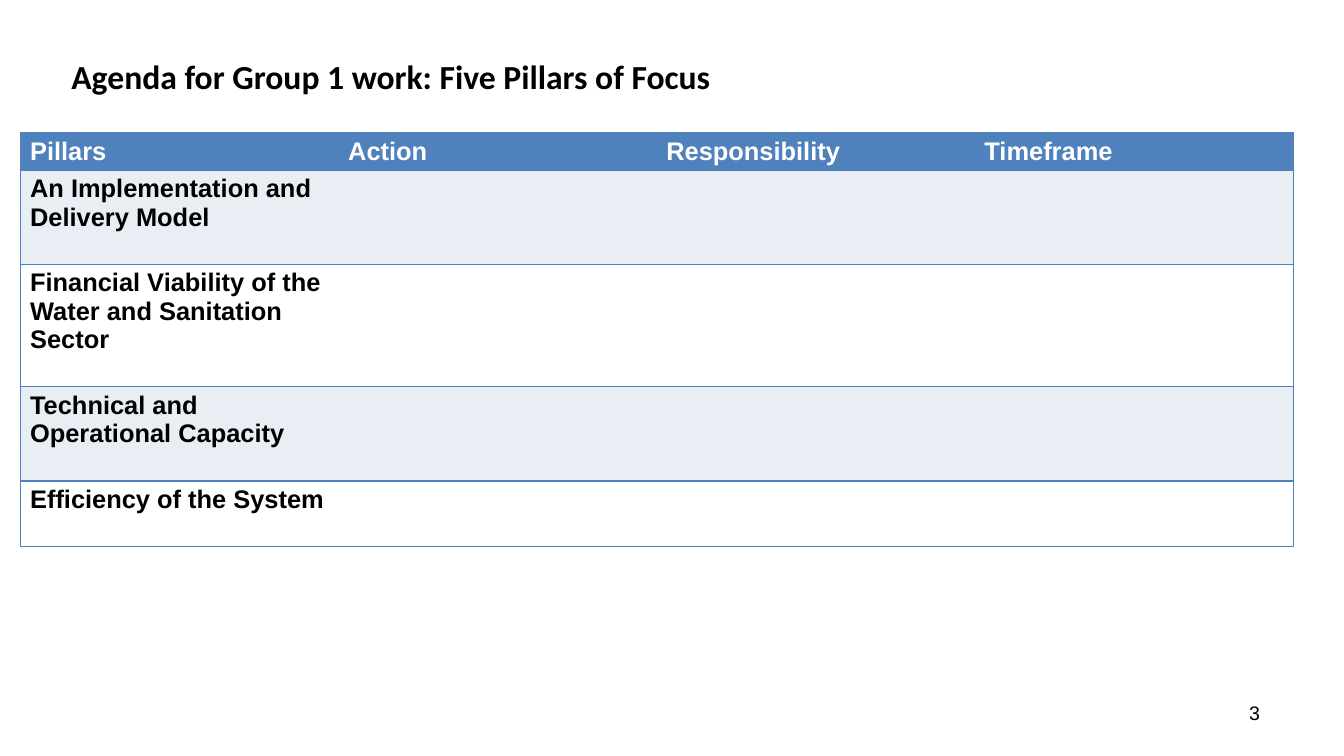
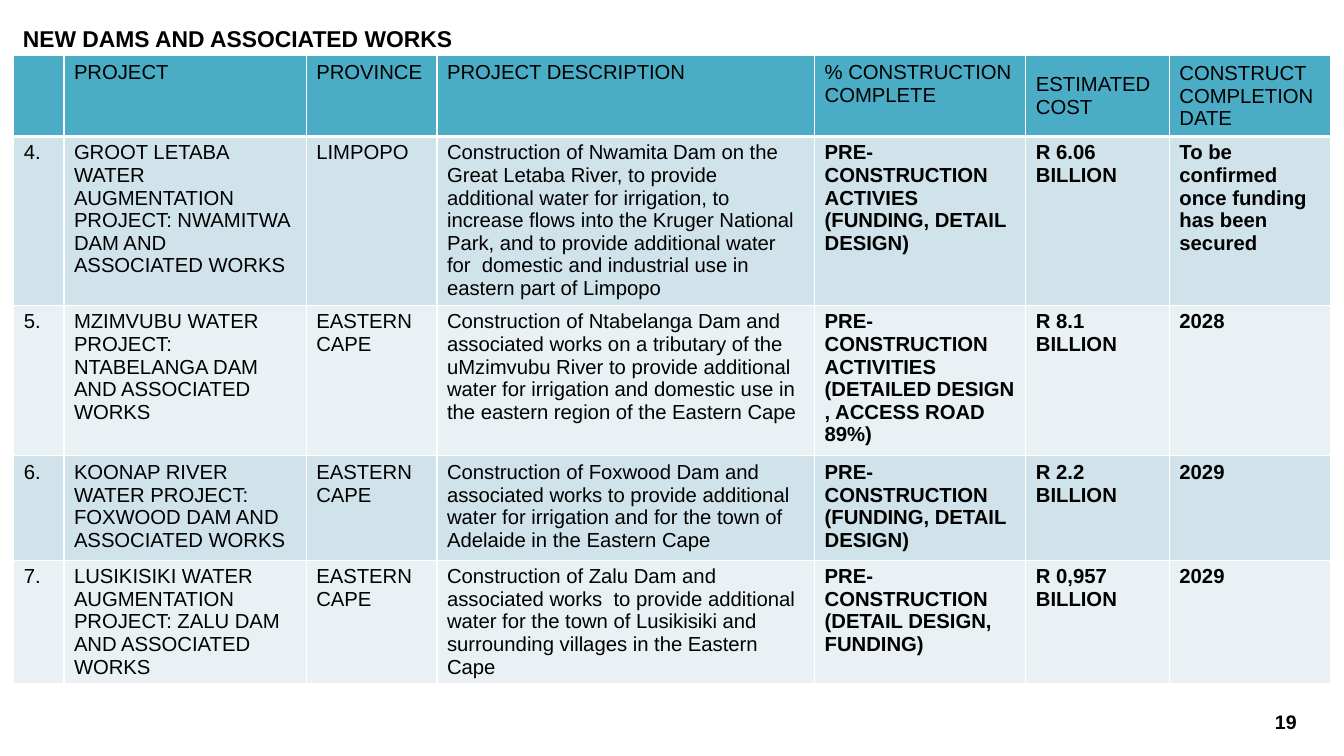
import dataclasses

import lxml.etree
import pptx
import pptx.dml.color
import pptx.enum.text
import pptx.oxml.ns
import pptx.util

ALIGN = pptx.enum.text.PP_ALIGN
ANCHOR = pptx.enum.text.MSO_ANCHOR


@dataclasses.dataclass(frozen=True)
class Theme:
    wide: float = 14.7
    high: float = 8.27
    body: str = "Arial"
    head: str = "Calibri"
    black: str = "000000"
    white: str = "FFFFFF"
    blue: str = "4F81BD"
    mist: str = "E9EDF4"
    teal: str = "4BACC6"
    aqua: str = "D0E3EA"
    pale: str = "E9F1F5"
    page: float = 15.4


THEME = Theme()


@dataclasses.dataclass(frozen=True)
class Box:
    left: float
    top: float
    wide: float
    high: float


@dataclasses.dataclass(frozen=True)
class Type:
    size: float
    bold: bool = False
    color: str = THEME.black
    face: str = THEME.body


@dataclasses.dataclass(frozen=True)
class Label:
    text: str
    box: Box
    type: Type
    align: ALIGN = ALIGN.LEFT


@dataclasses.dataclass(frozen=True)
class Grid:
    left: float
    top: float
    cols: list[float]
    rows: list[float]
    cells: list[list[str]]
    fills: tuple[str, str, str]
    head: Type
    key: Type
    fact: Type
    keys: int
    line: str
    rule: float
    inner: bool
    pad: tuple[float, float]
    mid: tuple[int, ...] = ()


@dataclasses.dataclass(frozen=True)
class Page:
    title: Label
    grid: Grid
    number: Label


def across(share: float) -> int:
    return pptx.util.Inches(THEME.wide * share / 100)


def down(share: float) -> int:
    return pptx.util.Inches(THEME.high * share / 100)


def rgb(code: str) -> pptx.dml.color.RGBColor:
    return pptx.dml.color.RGBColor.from_string(code)


def style(frame, kind: Type, align: ALIGN = ALIGN.LEFT) -> None:
    for para in frame.paragraphs:
        para.alignment = align
        para.font.size = pptx.util.Pt(kind.size)
        para.font.bold = kind.bold
        para.font.name = kind.face
        para.font.color.rgb = rgb(kind.color)


def write(shape, label: Label, anchor: ANCHOR) -> None:
    box = label.box
    shape.left, shape.top = across(box.left), down(box.top)
    shape.width, shape.height = across(box.wide), down(box.high)
    frame = shape.text_frame
    frame.text = label.text
    frame.word_wrap = True
    frame.auto_size = pptx.enum.text.MSO_AUTO_SIZE.NONE
    frame.vertical_anchor = anchor
    style(frame, label.type, label.align)


def edge(cell, lines: dict[str, float], color: str) -> None:
    name = pptx.oxml.ns.qn
    props = cell._tc.get_or_add_tcPr()
    for spot, (side, width) in enumerate(lines.items()):
        line = lxml.etree.Element(name(f"a:ln{side}"), w=str(pptx.util.Pt(width)))
        if width:
            fill = lxml.etree.SubElement(line, name("a:solidFill"))
            lxml.etree.SubElement(fill, name("a:srgbClr"), val=color)
        else:
            lxml.etree.SubElement(line, name("a:noFill"))
        props.insert(spot, line)


def draw_grid(slide, grid: Grid) -> None:
    last = len(grid.cols) - 1
    frame = slide.shapes.add_table(
        len(grid.rows), len(grid.cols), across(grid.left), down(grid.top),
        across(sum(grid.cols)), down(sum(grid.rows)))
    table = frame.table
    for col, share in zip(table.columns, grid.cols):
        col.width = across(share)
    for row, share in zip(table.rows, grid.rows):
        row.height = down(share)
    for r, texts in enumerate(grid.cells):
        for c, text in enumerate(texts):
            cell = table.cell(r, c)
            cell.text = text
            cell.margin_left = cell.margin_right = pptx.util.Inches(grid.pad[0])
            cell.margin_top = cell.margin_bottom = pptx.util.Inches(grid.pad[1])
            centred = r == 0 and c in grid.mid
            cell.vertical_anchor = ANCHOR.MIDDLE if centred else ANCHOR.TOP
            kind = grid.head if r == 0 else grid.key if c < grid.keys else grid.fact
            style(cell.text_frame, kind)
            cell.fill.solid()
            cell.fill.fore_color.rgb = rgb(grid.fills[0 if r == 0 else 2 - r % 2])
            edge(cell, {
                "L": 1 if grid.inner or c == 0 else 0,
                "R": 1 if grid.inner or c == last else 0,
                "T": grid.rule if r == 1 else 1,
                "B": grid.rule if r == 0 else 1,
            }, grid.line)


def draw_page(deck, page: Page) -> None:
    slide = deck.slides.add_slide(deck.slide_layouts[5])
    write(slide.shapes.title, page.title, ANCHOR.MIDDLE)
    draw_grid(slide, page.grid)
    write(slide.shapes.add_textbox(0, 0, 0, 0), page.number, ANCHOR.TOP)


STRONG = Type(20, True)
PLAIN = Type(16)
PILLARS = [
    "An Implementation and Delivery Model",
    "Financial Viability of the Water and Sanitation Sector",
    "Technical and Operational Capacity",
    "Efficiency of the System",
]
DAMS = [
    ["", "PROJECT", "PROVINCE", "PROJECT DESCRIPTION", "% CONSTRUCTION COMPLETE",
     "ESTIMATED COST", "CONSTRUCT COMPLETION DATE"],
    ["4.", "GROOT LETABA WATER AUGMENTATION PROJECT: NWAMITWA DAM AND ASSOCIATED WORKS",
     "LIMPOPO",
     "Construction of Nwamita Dam on the Great Letaba River, to provide additional water "
     "for irrigation, to increase flows into the Kruger National Park, and to provide "
     "additional water for  domestic and industrial use in eastern part of Limpopo",
     "PRE-CONSTRUCTION ACTIVIES (FUNDING, DETAIL DESIGN)",
     "R 6.06 BILLION", "To be confirmed once funding has been secured"],
    ["5.", "MZIMVUBU WATER PROJECT: NTABELANGA DAM AND ASSOCIATED WORKS",
     "EASTERN CAPE",
     "Construction of Ntabelanga Dam and associated works on a tributary of the uMzimvubu "
     "River to provide additional water for irrigation and domestic use in the eastern "
     "region of the Eastern Cape",
     "PRE-CONSTRUCTION ACTIVITIES\n(DETAILED DESIGN , ACCESS ROAD 89%)",
     "R 8.1 BILLION", "2028"],
    ["6.", "KOONAP RIVER WATER PROJECT: FOXWOOD DAM AND ASSOCIATED WORKS",
     "EASTERN CAPE",
     "Construction of Foxwood Dam and associated works to provide additional water for "
     "irrigation and for the town of Adelaide in the Eastern Cape",
     "PRE-CONSTRUCTION\n(FUNDING, DETAIL DESIGN)",
     "R 2.2 BILLION", "2029"],
    ["7.", "LUSIKISIKI WATER AUGMENTATION PROJECT: ZALU DAM AND ASSOCIATED WORKS",
     "EASTERN CAPE",
     "Construction of Zalu Dam and associated works  to provide additional water for the "
     "town of Lusikisiki and surrounding villages in the Eastern Cape",
     "PRE-CONSTRUCTION\n(DETAIL DESIGN, FUNDING)",
     "R 0,957 BILLION", "2029"],
]
PAGES = [
    Page(
        Label("Agenda for Group 1 work: Five Pillars of Focus",
              Box(4.63, 6.17, 93.27, 7.86), Type(26.5, True, face=THEME.head)),
        Grid(1.56, 17.53, [23.67] * 4, [5, 12.45, 16.2, 12.45, 8.73],
             [["Pillars", "Action", "Responsibility", "Timeframe"]]
             + [[name, "", "", ""] for name in PILLARS],
             (THEME.blue, THEME.mist, THEME.white),
             Type(20, True, THEME.white), STRONG, STRONG, 1,
             THEME.blue, 1, False, (0.1, 0.05)),
        Label("3", Box(87.76, 92.14, 11.16, 5.32), Type(THEME.page), ALIGN.CENTER),
    ),
    Page(
        Label("NEW DAMS AND ASSOCIATED WORKS",
              Box(1.02, 2.9, 55.92, 4.47), Type(18, True)),
        Grid(1.02, 7.38, [3.74, 18.03, 9.73, 28.1, 15.72, 10.68, 11.97],
             [10.64, 22.25, 19.95, 13.78, 16.3], DAMS,
             (THEME.teal, THEME.aqua, THEME.pale),
             PLAIN, PLAIN, Type(16, True), 4,
             THEME.white, 3, True, (0.11, 0.06), (5, 6)),
        Label("19", Box(92.18, 93.35, 4.97, 3.63), Type(THEME.page, True), ALIGN.RIGHT),
    ),
]


def main() -> None:
    deck = pptx.Presentation()
    deck.slide_width, deck.slide_height = across(100), down(100)
    for page in PAGES:
        draw_page(deck, page)
    deck.save("out.pptx")


if __name__ == "__main__":
    main()
